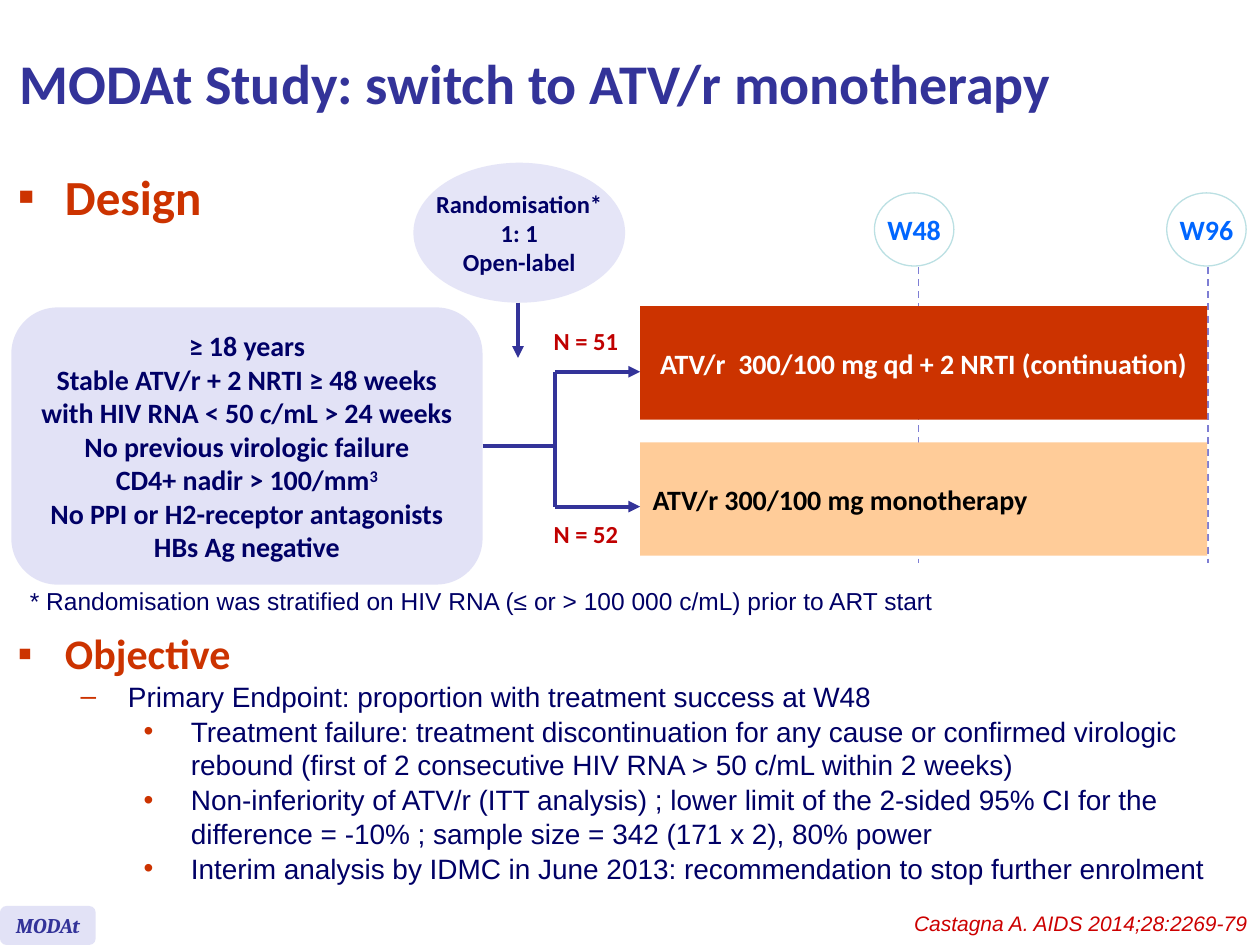
from lxml.etree import SubElement
from pptx import Presentation
from pptx.dml.color import RGBColor
from pptx.enum.dml import MSO_LINE
from pptx.enum.shapes import MSO_CONNECTOR, MSO_SHAPE
from pptx.enum.text import MSO_ANCHOR, PP_ALIGN
from pptx.oxml.ns import qn
from pptx.util import Pt

INDIGO, NAVY, LAVENDER = "333399", "000066", "E2E2F6"
RED, CRIMSON, BRICK, WHITE = "CC0000", "C00000", "CC3300", "FFFFFF"
LEFT, CENTER, RIGHT = PP_ALIGN.LEFT, PP_ALIGN.CENTER, PP_ALIGN.RIGHT


def color(hex_string):
    return RGBColor.from_string(hex_string)


def add_bullet(paragraph, character, margin):
    properties = paragraph._p.get_or_add_pPr()
    properties.set("marL", str(Pt(margin)))
    properties.set("indent", str(Pt(-27)))
    bullet_color = SubElement(properties, qn("a:buClr"))
    SubElement(bullet_color, qn("a:srgbClr"), val=BRICK)
    SubElement(properties, qn("a:buFont"), typeface="Arial")
    SubElement(properties, qn("a:buChar"), char=character)


def write(shape, *lines, size=16, font="Calibri", ink=NAVY, bold=True, italic=False,
          align=LEFT, bullet=None, margin=27, space_before=0):
    """Append paragraphs; a line given as a pair is text and its superscript."""
    frame = shape.text_frame
    for line in lines:
        paragraph = frame.add_paragraph() if frame.text else frame.paragraphs[0]
        if bullet:
            add_bullet(paragraph, bullet, margin)
        paragraph.alignment = align
        paragraph.space_before = Pt(space_before)
        parts = (line,) if isinstance(line, str) else line
        for position, part in enumerate(parts):
            run = paragraph.add_run()
            run.text = part
            run.font.size = Pt(size)
            run.font.name = font
            run.font.bold = bold
            run.font.italic = italic
            run.font.color.rgb = color(ink)
            if position:
                run._r.get_or_add_rPr().set("baseline", "30000")


def add_text_box(slide, left, top, width, height, wrap=True, anchor=MSO_ANCHOR.TOP):
    box = slide.shapes.add_textbox(Pt(left), Pt(top), Pt(width), Pt(height))
    box.text_frame.word_wrap = wrap
    box.text_frame.vertical_anchor = anchor
    return box


def add_block(slide, kind, left, top, width, height, fill, outline=None, wrap=True):
    shape = slide.shapes.add_shape(kind, Pt(left), Pt(top), Pt(width), Pt(height))
    shape.shadow.inherit = False
    shape.fill.solid()
    shape.fill.fore_color.rgb = color(fill)
    if outline:
        shape.line.color.rgb = color(outline)
        shape.line.width = Pt(0.75)
    else:
        shape.line.fill.background()
    shape.text_frame.word_wrap = wrap
    shape.text_frame.vertical_anchor = MSO_ANCHOR.MIDDLE
    return shape


def add_line(slide, x1, y1, x2, y2, ink=INDIGO, width=2.25, dashed=False, arrow=False):
    connector = slide.shapes.add_connector(
        MSO_CONNECTOR.STRAIGHT, Pt(x1), Pt(y1), Pt(x2), Pt(y2))
    connector.line.color.rgb = color(ink)
    connector.line.width = Pt(width)
    if dashed:
        connector.line.dash_style = MSO_LINE.DASH
    if arrow:
        SubElement(connector.line._get_or_add_ln(), qn("a:tailEnd"), type="triangle")
    SubElement(connector._element.spPr, qn("a:effectLst"))
    return connector


def add_title(slide, left, top, width, height):
    title = add_text_box(slide, left, top, width, height, anchor=MSO_ANCHOR.MIDDLE)
    write(title, "MODAt Study: switch to ATV/r monotherapy", size=32, ink=INDIGO)


def add_visit(slide, left, top, label, line_x):
    """Draw a visit circle and the dashed time line below it."""
    add_line(slide, line_x, top + 42.4, line_x, top + 211.6, "7E7ED4", 1, dashed=True)
    circle = add_block(slide, MSO_SHAPE.OVAL, left, top, 45.4, 41.8, WHITE, "BBE0E3", wrap=False)
    write(circle, label, ink="0066FF", align=CENTER)


def add_arms(slide, left, top):
    """Draw the two treatment bars with the fork that leads to them."""
    fork_x = left - 48.5
    arms = [
        (0, 37.4, 8, "N = 51", BRICK, WHITE, CENTER,
         "ATV/r  300/100 mg qd + 2 NRTI (continuation)"),
        (77.8, 114.5, 118, "N = 52", "FFCC99", "000000", LEFT,
         "ATV/r 300/100 mg monotherapy"),
    ]
    add_line(slide, fork_x, top + arms[0][1], fork_x, top + arms[1][1])
    for bar_y, arrow_y, count_y, count, fill, ink, align, treatment in arms:
        bar = add_block(slide, MSO_SHAPE.RECTANGLE, left, top + bar_y, 324, 64.8, fill)
        write(bar, treatment, ink=ink, align=align)
        add_line(slide, fork_x, top + arrow_y, left, top + arrow_y, arrow=True)
        label = add_text_box(slide, left - 57, top + count_y, 52, 24.5, wrap=False)
        write(label, count, size=14, ink=CRIMSON, align=CENTER)
    return fork_x


def add_design(slide, left, top, width, height):
    heading = add_text_box(slide, left + 3, top, 143, 45)
    write(heading, "Design", size=28, ink=BRICK, bullet="▪")

    add_visit(slide, left + 499.7, top + 18.7, "W48", left + 524.9)
    add_visit(slide, left + 666.7, top + 18.7, "W96", left + 690.5)
    fork_x = add_arms(slide, left + 365.8, top + 83.5)

    randomisation = add_block(slide, MSO_SHAPE.OVAL, left + 236.2, top + 1.5, 121, 80,
                              "E5E5F7", wrap=False)
    write(randomisation, "Randomisation*", "1: 1", "Open-label", size=14, align=CENTER)
    add_line(slide, left + 296, top + 81.4, left + 296, top + 113, arrow=True)

    population = add_block(slide, MSO_SHAPE.ROUNDED_RECTANGLE,
                           left + 6.5, top + 84.2, 269.3, 158.4, LAVENDER)
    write(population,
          "≥ 18 years",
          "Stable ATV/r + 2 NRTI ≥ 48 weeks with HIV RNA < 50 c/mL > 24 weeks",
          "No previous virologic failure",
          ("CD4+ nadir > 100/mm", "3"),
          "No PPI or H2-receptor antagonists",
          "HBs Ag negative", align=CENTER)
    trunk_y = top + 84.2 + 158.4 / 2
    trunk = add_line(slide, left + 275.8, trunk_y, fork_x, trunk_y)
    trunk.begin_connect(population, 3)

    footnote = add_text_box(slide, left + 10, top + height - 24.5, 534, 24.5, wrap=False)
    write(footnote, "* Randomisation was stratified on HIV RNA (≤ or > 100 000 c/mL) "
          "prior to ART start", size=14, font="Arial", bold=False)


def add_objective(slide, left, top, width, height):
    box = add_text_box(slide, left, top, width, height)
    body = {"font": "Arial", "bold": False, "space_before": 0.8}
    write(box, "Objective", size=24, ink=BRICK, bullet="▪")
    write(box, "Primary Endpoint: proportion with treatment success at W48",
          bullet="–", margin=63, **body)
    write(box,
          "Treatment failure: treatment discontinuation for any cause or confirmed "
          "virologic rebound (first of 2 consecutive HIV RNA > 50 c/mL within 2 weeks)",
          "Non-inferiority of ATV/r (ITT analysis) ; lower limit of the 2-sided 95% CI "
          "for the difference = -10% ; sample size = 342 (171 x 2), 80% power",
          "Interim analysis by IDMC in June 2013: recommendation to stop further enrolment",
          bullet="•", margin=99, **body)


def add_footer(slide, left, top, width, height):
    badge = add_block(slide, MSO_SHAPE.ROUNDED_RECTANGLE, left, top + 0.7, 54.7, 22.3,
                      LAVENDER, wrap=False)
    write(badge, "MODAt", size=12, font="Cambria", ink=INDIGO, italic=True, align=CENTER)
    citation = add_text_box(slide, left + width - 252, top, 252, 21.6)
    write(citation, "Castagna A. AIDS 2014;28:2269-79", size=12, font="Arial",
          ink=RED, bold=False, italic=True, align=RIGHT)


def main():
    presentation = Presentation()
    presentation.slide_width, presentation.slide_height = Pt(720), Pt(540)
    slide = presentation.slides.add_slide(presentation.slide_layouts[6])
    add_title(slide, 4.3, 3.6, 645, 87)
    add_design(slide, 0, 91.5, 720, 264.2)
    add_objective(slide, 3, 355, 713.5, 162)
    add_footer(slide, 0, 517, 720, 23)
    presentation.save("out.pptx")


if __name__ == "__main__":
    main()
